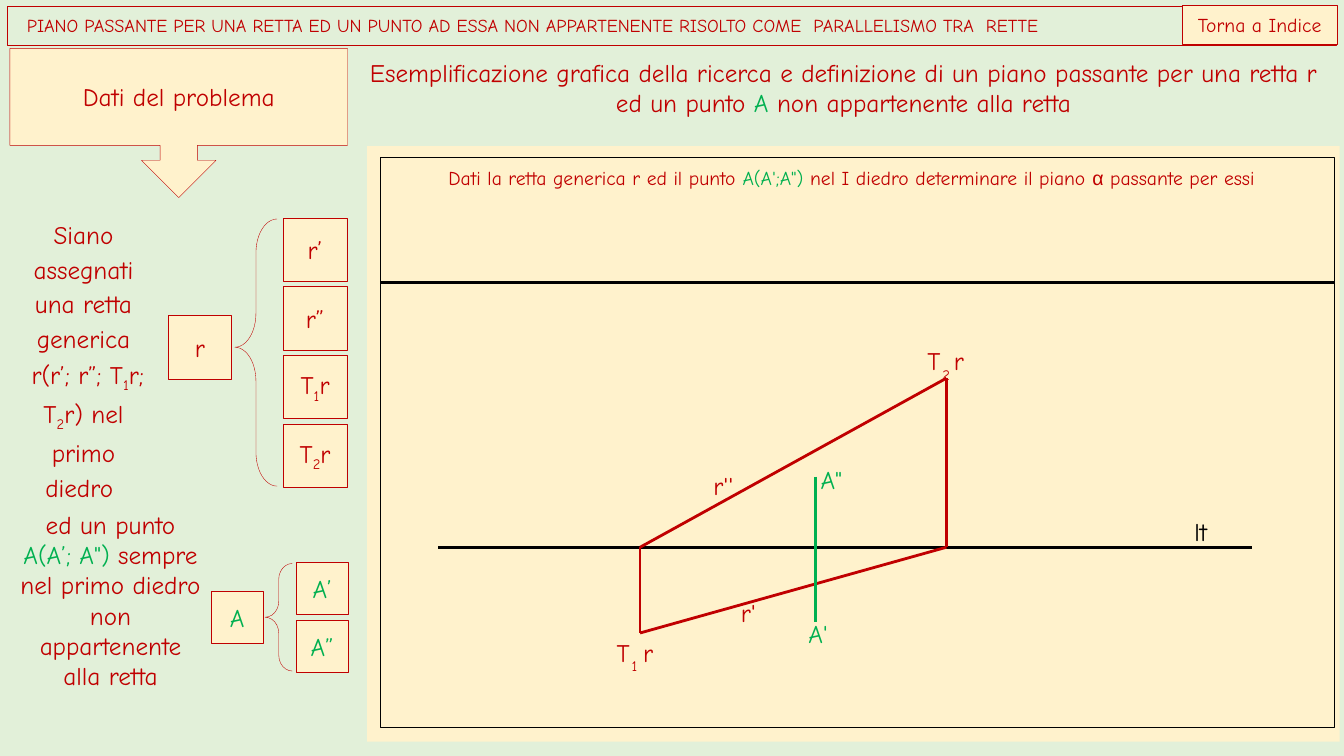
from dataclasses import dataclass

from lxml.etree import SubElement
from pptx import Presentation
from pptx.dml.color import RGBColor
from pptx.enum.shapes import MSO_CONNECTOR, MSO_SHAPE
from pptx.enum.text import MSO_ANCHOR, MSO_AUTO_SIZE, PP_ALIGN
from pptx.oxml.ns import qn
from pptx.util import Cm, Pt

RED = RGBColor(0xC0, 0x00, 0x00)
GREEN = RGBColor(0x00, 0xB0, 0x50)
BLACK = RGBColor(0x00, 0x00, 0x00)
CREAM = RGBColor(0xFF, 0xF2, 0xCC)
MINT = RGBColor(0xE2, 0xF0, 0xD9)
FONT = "Comic Neue"


@dataclass
class Box:
    left: float
    top: float
    width: float
    height: float

    def inner(self, across, down, width, height):
        return Box(self.left + across, self.top + down, width, height)

    def lengths(self):
        return Cm(self.left), Cm(self.top), Cm(self.width), Cm(self.height)


@dataclass
class Span:
    text: str
    colour: RGBColor = None
    font: str = FONT
    lowered: bool = False


def write(shape, *paras, size=18, colour=RED, align=PP_ALIGN.CENTER, anchor=MSO_ANCHOR.MIDDLE,
          spacing=None, after=None, wrap=True, inset=(0.25, 0.13)):
    frame = shape.text_frame
    frame.word_wrap = wrap
    frame.vertical_anchor = anchor
    frame.margin_left = frame.margin_right = Cm(inset[0])
    frame.margin_top = frame.margin_bottom = Cm(inset[1])
    for index, spans in enumerate(paras):
        para = frame.add_paragraph() if index else frame.paragraphs[0]
        para.alignment = align
        para.line_spacing = spacing
        para.space_after = after
        for span in [spans] if isinstance(spans, str) else spans:
            span = Span(span) if isinstance(span, str) else span
            run = para.add_run()
            run.text = span.text
            run.font.size = Pt(size)
            run.font.name = span.font
            run.font.color.rgb = span.colour or colour
            if span.lowered:
                run._r.get_or_add_rPr().set("baseline", "-25000")


def add_figure(page, box, kind=MSO_SHAPE.RECTANGLE, fill=CREAM, line=RED, width=0.25):
    figure = page.shapes.add_shape(kind, *box.lengths())
    figure.shadow.inherit = False
    if fill is None:
        figure.fill.background()
    else:
        figure.fill.solid()
        figure.fill.fore_color.rgb = fill
    if line is None:
        figure.line.fill.background()
    else:
        figure.line.color.rgb = line
        figure.line.width = Pt(width)
    return figure


def add_text(page, box, *paras, **style):
    text = page.shapes.add_textbox(*box.lengths())
    write(text, *paras, anchor=MSO_ANCHOR.TOP, **style)
    text.text_frame.auto_size = MSO_AUTO_SIZE.SHAPE_TO_FIT_TEXT


def add_line(page, box, start, end, colour):
    line = page.shapes.add_connector(
        MSO_CONNECTOR.STRAIGHT,
        Cm(box.left + start[0]), Cm(box.top + start[1]),
        Cm(box.left + end[0]), Cm(box.top + end[1]))
    line.line.color.rgb = colour
    line.line.width = Pt(0)
    SubElement(line._element.spPr, qn("a:effectLst"))


def add_header(page, box):
    bar = add_figure(page, box, fill=None)
    write(bar, "PIANO PASSANTE PER UNA RETTA ED UN PUNTO AD ESSA NON APPARTENENTE "
          "RISOLTO COME  PARALLELISMO TRA  RETTE",
          size=13, align=PP_ALIGN.LEFT, inset=(0.5, 0.13))
    button = add_figure(page, box.inner(box.width - 3.89, -0.02, 3.91, box.height))
    write(button, "Torna a Indice", size=14)


def add_bracket(page, box, stem, parts, cell, bend, tip, colour):
    gap = box.width - 2 * cell
    step = (box.height - cell) / (len(parts) - 1)
    brace = add_figure(page, box.inner(cell + 0.06 * gap, 0.03, 0.82 * gap, box.height - 0.06),
                       MSO_SHAPE.LEFT_BRACE, fill=None)
    brace.adjustments[0] = bend
    brace.adjustments[1] = tip
    cells = [(stem, 0, box.height * tip - cell / 2)]
    cells += [(part, box.width - cell, row * step) for row, part in enumerate(parts)]
    for label, across, down in cells:
        square = add_figure(page, box.inner(across, down, cell, cell))
        write(square, label, colour=colour, after=Pt(10))


def add_data(page, box):
    callout = add_figure(page, box.inner(0.1, 0, 8.51, 3.76), MSO_SHAPE.DOWN_ARROW_CALLOUT)
    write(callout, "Dati del problema")
    one, two = Span("1", lowered=True), Span("2", lowered=True)
    add_text(page, box.inner(0, 4.06, 3.91, 7.29), "Siano assegnati una retta generica",
             [" r(r’; r”; T", one, "r; T", two, "r) nel primo diedro "], spacing=1.15)
    add_bracket(page, box.inner(4.09, 4.27, 4.5, 6.79), "r",
                ["r’", "r”", ["T", one, "r"], ["T", two, "r"]],
                cell=1.6, bend=0.8, tip=0.48, colour=RED)
    add_text(page, box.inner(0.08, 11.48, 5.11, 5.64),
             ["ed un punto ", Span("A(A’; A\") ", GREEN),
              "sempre nel primo diedro non appartenente alla retta"])
    add_bracket(page, box.inner(5.18, 12.95, 3.44, 2.77), "A", ["A’", "A”"],
                cell=1.3, bend=0.58, tip=0.5, colour=GREEN)


def add_label(page, box, text, across, down, width, colour=RED, lowered=False):
    add_text(page, box.inner(across, down, width, 0.76), [Span(text, lowered=lowered)],
             colour=colour, align=PP_ALIGN.LEFT, wrap=False, inset=(0, 0))


def add_trace(page, box, number, across, down):
    add_label(page, box, "T", across, down, 0.43)
    add_label(page, box, number, across + 0.38, down + 0.09, 0.22, lowered=True)
    add_label(page, box, "r", across + 0.67, down, 0.3)


def add_drawing(page, box):
    add_figure(page, box, line=None)
    add_figure(page, box.inner(0.33, 0.3, 24.05, 14.35), fill=None, line=BLACK, width=0)
    ground, first, second, point = 10.11, 6.88, 14.6, 11.3
    trace_one, trace_two = (first, 12.27), (second, 5.85)
    foot_one, foot_two = (first, ground), (second, ground)
    for start, end, colour in [
        ((0.33, 3.43), (24.38, 3.43), BLACK),
        ((1.8, ground), (22.3, ground), BLACK),
        (foot_one, trace_two, RED),
        (trace_one, foot_two, RED),
        (foot_one, trace_one, RED),
        (foot_two, trace_two, RED),
        ((point, 8.33), (point, 11.99), GREEN),
    ]:
        add_line(page, box, start, end, colour)
    add_text(page, box.inner(0.27, 0.51, 24.05, 0.61),
             ["Dati la retta generica r ed il punto ", Span("A(A';A\") ", GREEN),
              "nel I diedro determinare il piano ", Span("α", font="Arial"),
              " passante per essi "], size=14, inset=(0, 0))
    add_label(page, box, "lt", 20.85, 9.32, 0.76, BLACK)
    add_label(page, box, "A'", 11.12, 11.89, 0.71, GREEN)
    add_label(page, box, "A\"", 11.43, 8.03, 0.74, GREEN)
    add_label(page, box, "r'", 9.42, 11.38, 0.56)
    add_label(page, box, "r''", 8.73, 8.18, 0.81)
    add_trace(page, box, "1", 6.29, 12.37)
    add_trace(page, box, "2", 14.12, 5.03)


def main():
    deck = Presentation()
    deck.slide_width, deck.slide_height = Cm(33.87), Cm(19.05)
    page = deck.slides.add_slide(deck.slide_layouts[6])
    page.background.fill.solid()
    page.background.fill.fore_color.rgb = MINT
    add_header(page, Box(0.18, 0.15, 33.5, 0.99))
    add_data(page, Box(0.15, 1.22, 8.61, 17.2))
    add_text(page, Box(8.76, 1.32, 24.99, 1.8),
             ["Esemplificazione grafica della ricerca e definizione di un piano passante "
              "per una retta r ed un punto ", Span("A", GREEN), " non appartenente alla retta"])
    add_drawing(page, Box(9.25, 3.68, 24.51, 15.01))
    deck.save("out.pptx")


if __name__ == "__main__":
    main()
